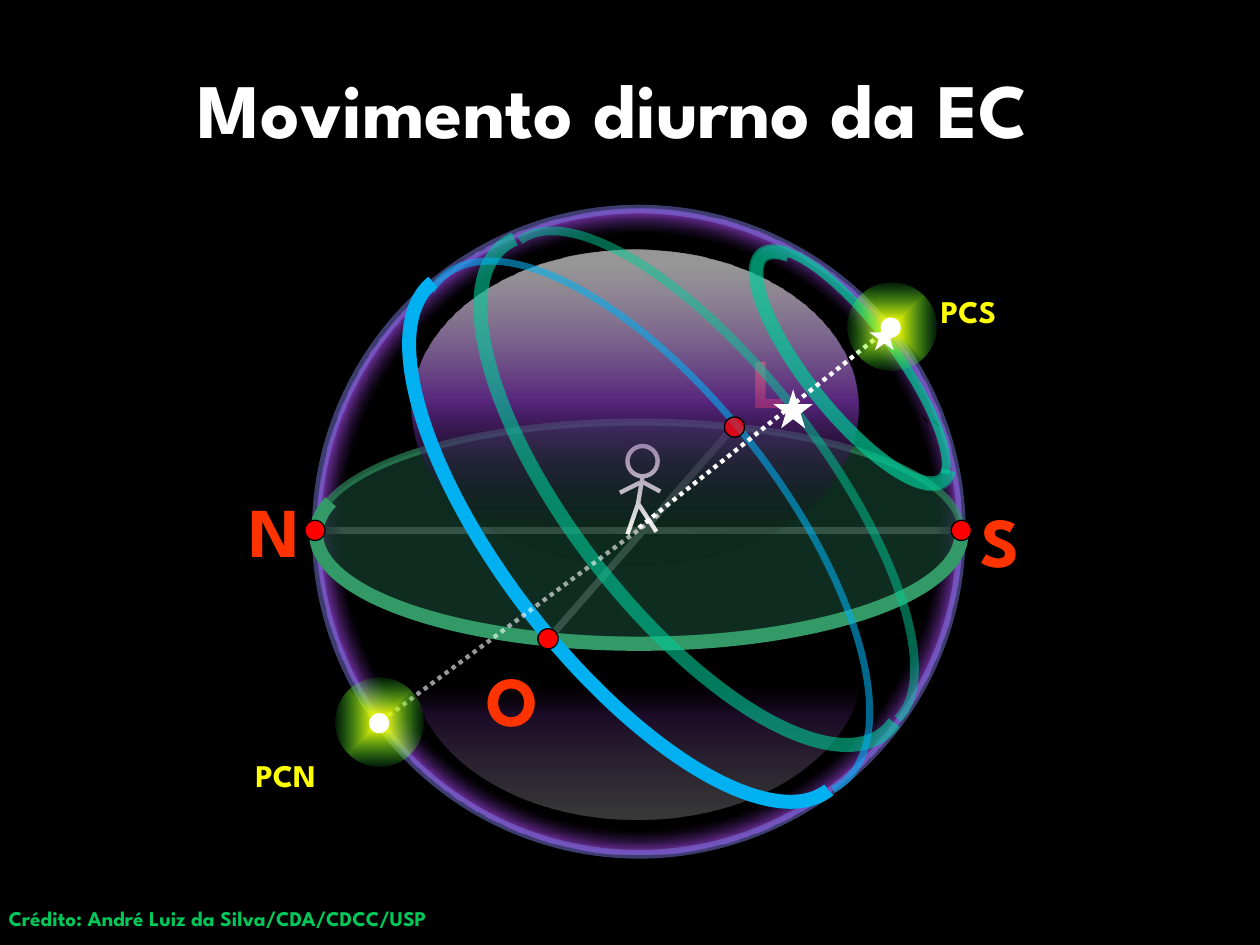
from lxml import etree
from pptx import Presentation
from pptx.dml.color import RGBColor
from pptx.enum.dml import MSO_LINE
from pptx.enum.shapes import MSO_CONNECTOR, MSO_SHAPE
from pptx.enum.text import MSO_ANCHOR, MSO_AUTO_SIZE, PP_ALIGN
from pptx.oxml import parse_xml
from pptx.oxml.ns import nsdecls, qn
from pptx.util import Inches, Pt

ELLIPSE, ARC, MOON, STAR = (MSO_SHAPE.OVAL, MSO_SHAPE.ARC, MSO_SHAPE.MOON,
                            MSO_SHAPE.STAR_5_POINT)
STRAIGHT, DOTTED = MSO_CONNECTOR.STRAIGHT, MSO_LINE.ROUND_DOT
FONT = "League Spartan"

BLACK = RGBColor(0x00, 0x00, 0x00)
WHITE = RGBColor(0xFF, 0xFF, 0xFF)
RED = RGBColor(0xFF, 0x00, 0x00)
ORANGE = RGBColor(0xFF, 0x33, 0x00)
YELLOW = RGBColor(0xFF, 0xFF, 0x00)
PURPLE = RGBColor(0x70, 0x30, 0xA0)
LILAC = RGBColor(0x78, 0x78, 0xDE)
LIME = RGBColor(0x21, 0xFF, 0x46)
CREDIT_GREEN = RGBColor(0x00, 0xC8, 0x5A)
HORIZON_FILL = RGBColor(0x14, 0x3C, 0x2B)
HORIZON_LINE = RGBColor(0x33, 0x99, 0x66)
STAR_PATH = RGBColor(0x00, 0xCC, 0x99)
EQUATOR = RGBColor(0x00, 0xB0, 0xF0)

# Gradients: stops of (position %, colour, opacity %), then the direction
LINEAR = '<a:lin ang="{}" scaled="0"/>'
RADIAL = ('<a:path path="{}"><a:fillToRect l="50000" t="50000" '
          'r="50000" b="50000"/></a:path>')
LOWER_GLOW = ([(3, WHITE, 37), (68, PURPLE, 41), (94, BLACK, 0)], LINEAR.format(0))
UPPER_GLOW = ([(6, WHITE, 58), (48, PURPLE, 77), (91, BLACK, 2)],
              LINEAR.format(90 * 60000))
SPHERE_RIM = ([(65, BLACK, 40), (70, PURPLE, 100)], RADIAL.format("circle"))
POLE_GLOW = ([(7, YELLOW, 100), (77, LIME, 2)], RADIAL.format("shape"))


def set_alpha(shape, opacity, *parents):
    """Make the solid colour below the given parents partly transparent."""
    route = "/".join(qn(tag) for tag in (*parents, "a:solidFill", "a:srgbClr"))
    color = shape._element.spPr.find(route)
    etree.SubElement(color, qn("a:alpha"), val=str(opacity * 1000))


def set_line(shape, color, width, opacity=100, dash=None):
    shape.line.color.rgb = color
    shape.line.width = Pt(width)
    if dash:
        shape.line.dash_style = dash
    if opacity < 100:
        set_alpha(shape, opacity, "a:ln")


def set_gradient(shape, stops, direction):
    shape.fill.background()
    stop_xml = "".join(
        f'<a:gs pos="{pos * 1000}"><a:srgbClr val="{color}">'
        f'<a:alpha val="{opacity * 1000}"/></a:srgbClr></a:gs>'
        for pos, color, opacity in stops)
    gradient = parse_xml(f'<a:gradFill {nsdecls("a")} rotWithShape="1">'
                         f'<a:gsLst>{stop_xml}</a:gsLst>{direction}</a:gradFill>')
    properties = shape._element.spPr
    properties.replace(properties.find(qn("a:noFill")), gradient)


def paint(shape, fill=None, opacity=100, gradient=None, line=None):
    shape.shadow.inherit = False
    if gradient:
        set_gradient(shape, *gradient)
    elif fill is not None:
        shape.fill.solid()
        shape.fill.fore_color.rgb = fill
        if opacity < 100:
            set_alpha(shape, opacity)
    else:
        shape.fill.background()
    if line:
        set_line(shape, *line)
    else:
        shape.line.fill.background()


def add_figure(slide, kind, box, rotation=0, adjustments=(), **look):
    shape = slide.shapes.add_shape(kind, *map(Inches, box))
    shape.rotation = rotation
    for i, value in enumerate(adjustments):
        shape.adjustments[i] = value
    paint(shape, **look)


def add_arc(slide, box, rotation, angles, **look):
    """Open arc between two angles in degrees."""
    add_figure(slide, ARC, box, rotation, [a * 0.6 for a in angles], **look)


def add_disc(slide, center, size, rotation=0, **look):
    x, y = center
    box = (x - size / 2, y - size / 2, size, size)
    add_figure(slide, ELLIPSE, box, rotation, **look)


def add_tick(slide, start, end):
    builder = slide.shapes.build_freeform(*map(Inches, start), scale=1.0)
    builder.add_line_segments([tuple(map(Inches, end))], close=False)
    paint(builder.convert_to_shape(), line=(BLACK, 0.75))


def add_line(slide, start, end, *line):
    connector = slide.shapes.add_connector(STRAIGHT, *map(Inches, (*start, *end)))
    set_line(connector, *line)
    etree.SubElement(connector._element.spPr, qn("a:effectLst"))


def write(frame, text, size, color):
    run = frame.paragraphs[0].add_run()
    run.text = text
    run.font.color.rgb = color
    for name, value in {"name": FONT, "size": Pt(size), "bold": True}.items():
        setattr(run.font, name, value)


def add_label(slide, text, box, size, color):
    frame = slide.shapes.add_textbox(*map(Inches, box)).text_frame
    frame.word_wrap = True
    frame.auto_size = MSO_AUTO_SIZE.SHAPE_TO_FIT_TEXT
    write(frame, text, size, color)


def add_title(slide, text):
    title = slide.shapes.title
    position = {"left": 0.62, "top": 0.23, "width": 8.5, "height": 1.25}
    for name, value in position.items():
        setattr(title, name, Inches(value))
    frame = title.text_frame
    frame.auto_size = MSO_AUTO_SIZE.NONE
    frame.vertical_anchor = MSO_ANCHOR.MIDDLE
    frame.paragraphs[0].alignment = PP_ALIGN.CENTER
    write(frame, text, 44, WHITE)


def add_observer(slide):
    pen = (WHITE, 2.5)
    add_disc(slide, (5.1, 3.66), 0.24, line=pen)
    limbs = [((5.1, 3.78), (5.06, 4.02)), ((5.06, 3.99), (5.21, 4.22)),
             ((5.06, 4.01), (4.98, 4.24)), ((5.09, 3.82), (5.24, 3.9)),
             ((4.92, 3.91), (5.08, 3.83))]
    for start, end in limbs:
        add_line(slide, start, end, *pen)


def main():
    prs = Presentation()
    prs.slide_width, prs.slide_height = Inches(10), Inches(7.5)
    slide = prs.slides.add_slide(prs.slide_layouts[5])
    slide.background.fill.solid()
    slide.background.fill.fore_color.rgb = BLACK
    add_title(slide, "Movimento diurno da EC")

    # Celestial sphere with the axes of the horizon
    north, south, west, east = (2.5, 4.21), (7.63, 4.21), (4.35, 5.07), (5.83, 3.39)
    add_figure(slide, MOON, (4.44, 4.1, 1.23, 3.58), 270, [0.875],
               gradient=LOWER_GLOW)
    add_line(slide, (4.31, 5.12), (5.83, 3.38), WHITE, 4)
    add_line(slide, (2.51, 4.21), (7.62, 4.21), WHITE, 4)
    add_disc(slide, (5.07, 4.22), 5.12, gradient=SPHERE_RIM, line=(LILAC, 5, 50))

    # Cardinal points and horizon plane
    for letter, x, y in [("N", 1.88, 3.82), ("L", 5.87, 2.64), ("S", 7.68, 3.9)]:
        add_label(slide, letter, (x, y, 0.39, 0.77), 40, ORANGE)
    add_figure(slide, ELLIPSE, (2.51, 3.35, 5.12, 1.73),
               fill=HORIZON_FILL, opacity=73, line=(HORIZON_LINE, 4, 60))
    add_label(slide, "O", (3.76, 5.16, 0.39, 0.77), 40, ORANGE)
    add_tick(slide, (7.45, 3.38), (7.41, 3.34))
    add_arc(slide, (2.51, 3.37, 5.12, 1.74), 0, (358, 186),
            fill=HORIZON_FILL, opacity=7, line=(HORIZON_LINE, 8))
    add_observer(slide)
    for point in (north, east, west, south):
        add_disc(slide, point, 0.16, fill=RED, line=(BLACK, 0.75))
    add_figure(slide, ELLIPSE, (3.27, 1.98, 3.54, 2.52), gradient=UPPER_GLOW)

    # Names of the poles
    for name, x, y in [("PCS", 7.37, 2.27), ("PCN", 1.93, 5.95)]:
        add_label(slide, name, (x, y, 0.87, 0.4), 18, YELLOW)
    add_tick(slide, (7.36, 3.35), (7.33, 3.31))

    # Daily paths of the stars: thin far halves, thick near halves
    near_polar = (265.6, 98.97)
    add_arc(slide, (6.41, 1.78, 0.71, 2.29), 143, (98.28, 265.58),
            line=(STAR_PATH, 5, 70))
    add_arc(slide, (6.42, 1.78, 0.71, 2.29), 141.3, near_polar,
            line=(STAR_PATH, 7.75, 35))
    add_arc(slide, (4.71, 1.4, 1.8, 4.84), 142.1, (90.08, 269.12),
            line=(STAR_PATH, 5, 50))
    add_label(slide, "Crédito: André Luiz da Silva/CDA/CDCC/USP",
              (-0.03, 7.14, 10.28, 0.3), 12, CREDIT_GREEN)
    add_arc(slide, (4.53, 1.43, 1.95, 4.91), 142.1, (267.19, 92.35),
            line=(STAR_PATH, 8, 60))
    add_arc(slide, (6.41, 1.77, 0.71, 2.29), 141.3, near_polar,
            line=(STAR_PATH, 8, 53))

    # Celestial equator, crossing the horizon at east and west
    add_arc(slide, (4.02, 1.64, 2.18, 5.12), 142.1, (86.16, 271.89),
            line=(EQUATOR, 4, 58))
    add_arc(slide, (4, 1.7, 2.01, 5.11), 142.1, (269.98, 90), line=(EQUATOR, 8))
    for point, opacity in [(west, 100), (east, 65)]:
        add_disc(slide, point, 0.16, fill=RED, opacity=opacity, line=(BLACK, 0.75))

    # Axis of the world and glowing poles
    south_pole, north_pole = (7.07, 2.6), (3.01, 5.74)
    add_line(slide, (3.03, 5.72), (5.25, 4.07), WHITE, 2.5, 60, DOTTED)
    add_line(slide, (5.07, 4.19), (7.07, 2.59), WHITE, 2.5, 100, DOTTED)
    for center in [(7.08, 2.59), (3.01, 5.73)]:
        add_disc(slide, center, 0.7, 305.7, gradient=POLE_GLOW)
    for pole in (south_pole, north_pole):
        add_disc(slide, pole, 0.16, 305.7, fill=WHITE)

    # Stars
    for box in [(6.9, 2.55, 0.24, 0.23), (6.14, 3.09, 0.31, 0.31)]:
        add_figure(slide, STAR, box, fill=WHITE)

    prs.save("out.pptx")


if __name__ == "__main__":
    main()
